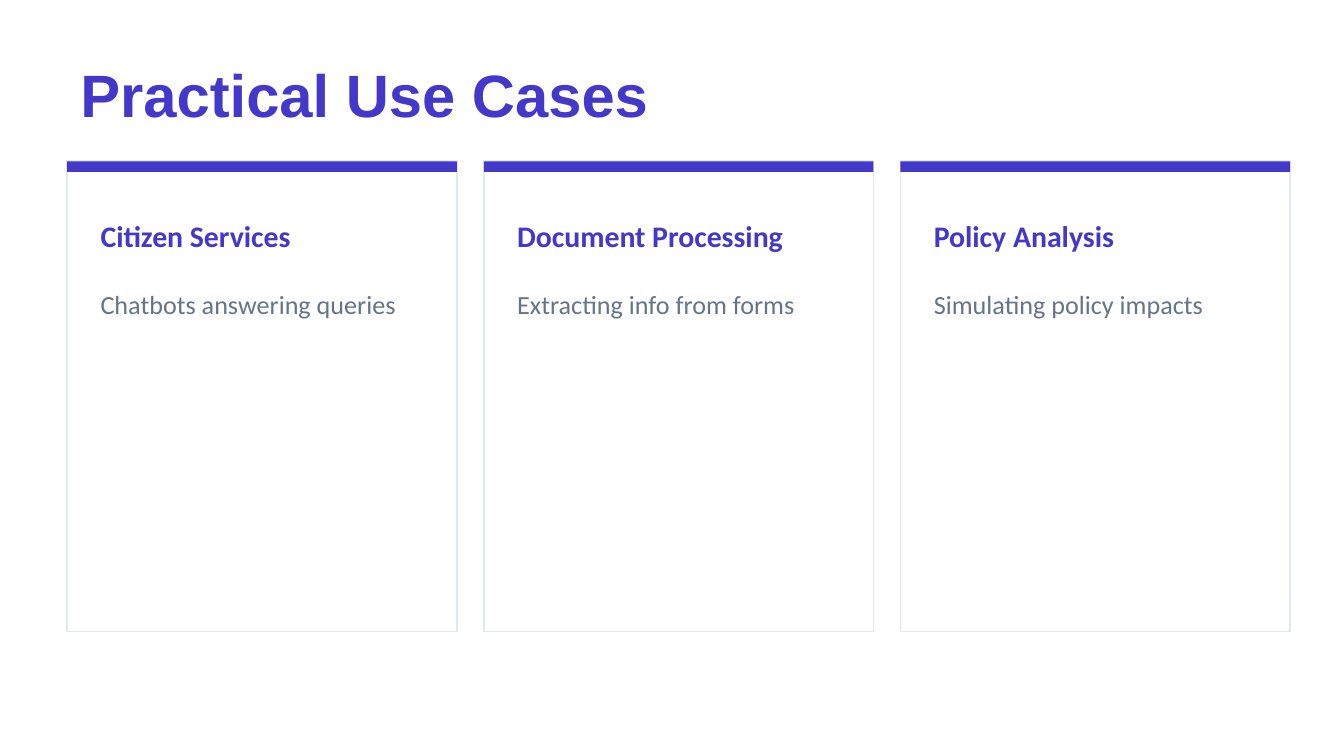
"""Build the Practical Use Cases slide with three cards."""
from dataclasses import dataclass

from pptx import Presentation
from pptx import util as u
from pptx.dml.color import RGBColor
from pptx.enum import shapes, text
from pptx.slide import Slide

INDIGO, SLATE, EDGE, WHITE = "4338CA", "64748B", "E2E8F0", "FFFFFF"
LEFT, TOP, WIDTH, GAP = 0.5, 1.2, 2.9, 0.2
PAD = 0.15


@dataclass
class Box:
    left: float
    top: float
    width: float
    height: float

    def place(self) -> tuple:
        return tuple(map(u.Inches, (self.left, self.top, self.width, self.height)))


@dataclass
class Style:
    font: str
    size: int
    color: str
    bold: bool
    anchor: text.MSO_ANCHOR


@dataclass
class Card:
    title: str
    body: str


TITLE = Style("Arial", 32, INDIGO, True, text.MSO_ANCHOR.MIDDLE)
HEAD = Style("Calibri", 16, INDIGO, True, text.MSO_ANCHOR.MIDDLE)
BODY = Style("Calibri", 14, SLATE, False, text.MSO_ANCHOR.TOP)
CARDS = [
    Card("Citizen Services", "Chatbots answering queries"),
    Card("Document Processing", "Extracting info from forms"),
    Card("Policy Analysis", "Simulating policy impacts"),
]


def paint(target, color: str) -> None:
    target.solid()
    target.fore_color.rgb = RGBColor.from_string(color)


def add_rect(slide: Slide, box: Box, fill: str, edge: str = "") -> None:
    rect = slide.shapes.add_shape(shapes.MSO_SHAPE.RECTANGLE, *box.place())
    rect.shadow.inherit = False
    paint(rect.fill, fill)
    if edge:
        paint(rect.line.fill, edge)
        rect.line.width = u.Pt(1)
    else:
        rect.line.fill.background()


def add_text(slide: Slide, box: Box, words: str, style: Style) -> None:
    frame = slide.shapes.add_textbox(*box.place()).text_frame
    frame.word_wrap = True
    frame.vertical_anchor = style.anchor
    para = frame.paragraphs[0]
    para.text = words
    para.font.name = style.font
    para.font.size = u.Pt(style.size)
    para.font.bold = style.bold
    paint(para.font.fill, style.color)


def add_card(slide: Slide, left: float, card: Card) -> None:
    add_rect(slide, Box(left, TOP, WIDTH, 3.5), WHITE, EDGE)
    add_rect(slide, Box(left, TOP, WIDTH, 0.08), INDIGO)
    inner = WIDTH - 2 * PAD
    add_text(slide, Box(left + PAD, TOP + 0.3, inner, 0.5), card.title, HEAD)
    add_text(slide, Box(left + PAD, TOP + 0.9, inner, 2.4), card.body, BODY)


def main() -> None:
    deck = Presentation()
    deck.slide_width = u.Inches(10)
    deck.slide_height = u.Inches(10 * 9 / 16)
    slide = deck.slides.add_slide(deck.slide_layouts[6])
    paint(slide.background.fill, WHITE)
    add_text(slide, Box(LEFT, 0.4, 9, 0.6), "Practical Use Cases", TITLE)
    for i, card in enumerate(CARDS):
        add_card(slide, LEFT + i * (WIDTH + GAP), card)
    deck.save("out.pptx")


if __name__ == "__main__":
    main()
